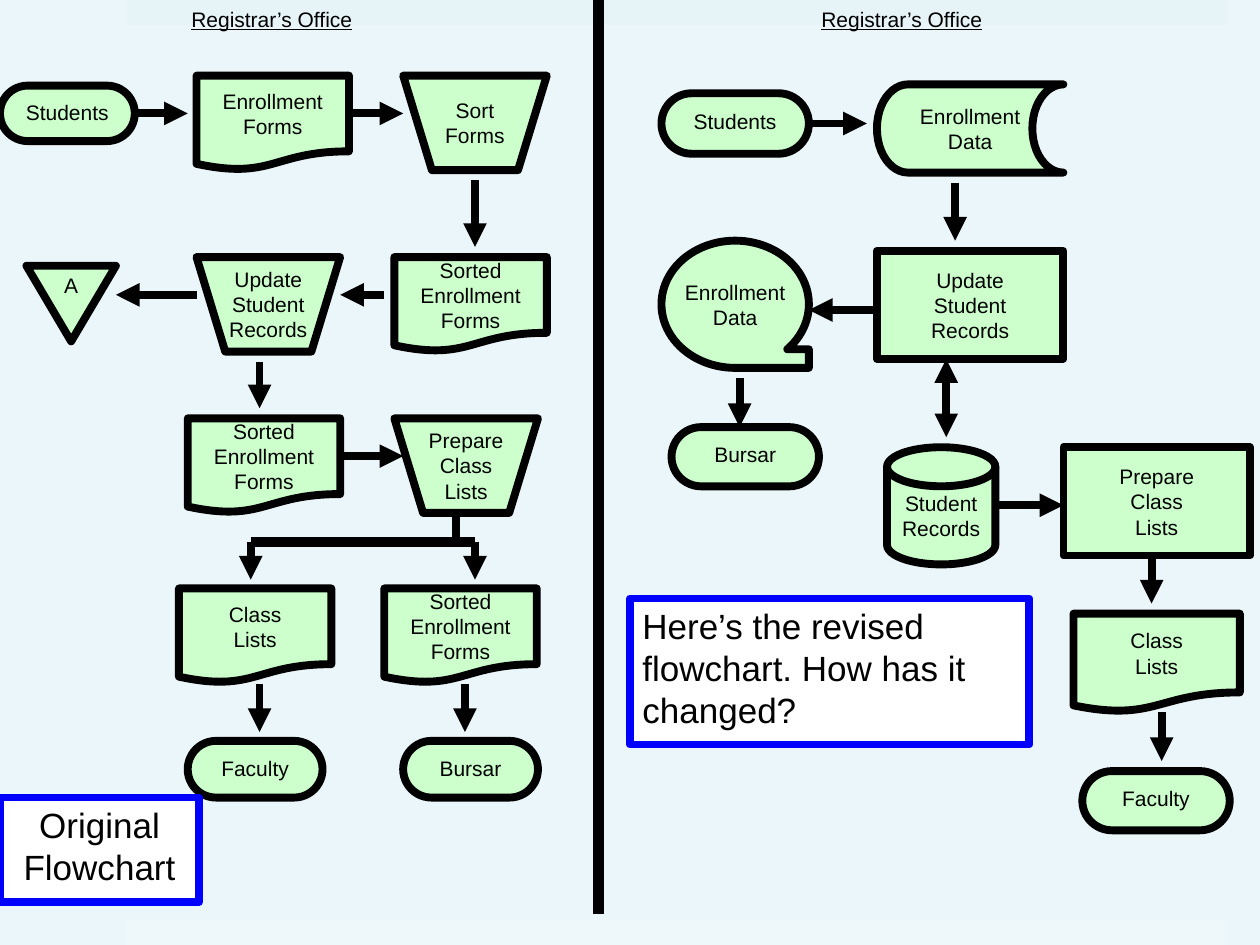
"""Build a slide that sets an original registrar flowchart beside its revision."""
import lxml.etree
import pptx
import pptx.dml.color
import pptx.enum.shapes
import pptx.enum.text
import pptx.oxml.ns
import pptx.util

PX = 9144
BLACK = pptx.dml.color.RGBColor(0x00, 0x00, 0x00)
WHITE = pptx.dml.color.RGBColor(0xFF, 0xFF, 0xFF)
BLUE = pptx.dml.color.RGBColor(0x00, 0x00, 0xFF)
GREEN = pptx.dml.color.RGBColor(0xCC, 0xFF, 0xCC)
SKY = pptx.dml.color.RGBColor(0xEB, 0xF6, 0xFA)
TOP_BAND = pptx.dml.color.RGBColor(0xE6, 0xF4, 0xF8)
BOTTOM_BAND = pptx.dml.color.RGBColor(0xEE, 0xF8, 0xFB)
KIND = pptx.enum.shapes.MSO_SHAPE
ALIGN = pptx.enum.text.PP_ALIGN
ANCHOR = pptx.enum.text.MSO_ANCHOR
FIT = pptx.enum.text.MSO_AUTO_SIZE

TERMINAL = KIND.ROUNDED_RECTANGLE
PROCESS = KIND.RECTANGLE
DOCUMENT = KIND.FLOWCHART_DOCUMENT
MANUAL = KIND.FLOWCHART_MANUAL_OPERATION
STORAGE = KIND.FLOWCHART_STORED_DATA
DISK = KIND.FLOWCHART_MAGNETIC_DISK
TAPE = KIND.FLOWCHART_SEQUENTIAL_ACCESS_STORAGE
MERGE = KIND.FLOWCHART_MERGE


def write(box, text, size=12, align=ALIGN.CENTER, anchor=ANCHOR.MIDDLE,
          wrap=False, underline=None, fit=FIT.NONE):
    frame = box.text_frame
    frame.word_wrap = wrap
    frame.auto_size = fit
    frame.vertical_anchor = anchor
    for number, line in enumerate(text.split("\n")):
        para = frame.add_paragraph() if number else frame.paragraphs[0]
        para.alignment = align
        span = para.add_run()
        span.text = line
        span.font.name = "Arial"
        span.font.size = pptx.util.Pt(size)
        span.font.color.rgb = BLACK
        span.font.underline = underline


def add_box(kind, left, top, width, height, fill=GREEN, outline=BLACK):
    box = page.shapes.add_shape(kind, left * PX, top * PX, width * PX, height * PX)
    box.shadow.inherit = False
    box.fill.solid()
    box.fill.fore_color.rgb = fill
    if outline is None:
        box.line.fill.background()
    else:
        box.line.color.rgb = outline
        box.line.width = pptx.util.Pt(4.5)
    return box


deck = pptx.Presentation()
deck.slide_width = 1000 * PX
deck.slide_height = 750 * PX
page = deck.slides.add_slide(deck.slide_layouts[6])
page.background.fill.solid()
page.background.fill.fore_color.rgb = SKY

for top, colour in [(0, TOP_BAND), (730, BOTTOM_BAND)]:
    add_box(PROCESS, 100, top, 875, 20, fill=colour, outline=None)

for left in (142, 642):
    heading = page.shapes.add_textbox(left * PX, 0, 149 * PX, 30 * PX)
    write(heading, "Registrar’s Office", align=ALIGN.LEFT, anchor=ANCHOR.TOP,
          underline=True, fit=FIT.SHAPE_TO_FIT_TEXT)

terminals = {}
for name, text, left, top, width, height in [
    ("original students", "Students", 0, 68, 107, 44),
    ("original bursar", "Bursar", 320, 588, 107, 45),
    ("original faculty", "Faculty", 149, 588, 107, 45),
    ("revised students", "Students", 525, 74, 117, 48),
    ("revised bursar", "Bursar", 533, 339, 117, 47),
    ("revised faculty", "Faculty", 859, 612, 117, 47),
]:
    box = add_box(TERMINAL, left, top, width, height)
    box.adjustments[0] = 0.5
    write(box, text, anchor=ANCHOR.TOP, wrap=True)
    terminals[name] = box

for kind, text, left, top, width, height in [
    (DOCUMENT, "Enrollment\nForms", 156, 60, 121, 75),
    (MANUAL, "Sort\nForms", 320, 60, 114, 75),
    (DOCUMENT, "Sorted\nEnrollment\nForms", 313, 204, 121, 75),
    (MANUAL, "Update\nStudent\nRecords", 156, 204, 114, 75),
    (MERGE, "A", 21, 211, 71, 60),
    (MANUAL, "Prepare\nClass\nLists", 313, 332, 114, 75),
    (DOCUMENT, "Sorted\nEnrollment\nForms", 149, 332, 121, 75),
    (DOCUMENT, "Class\nLists", 142, 467, 121, 75),
    (DOCUMENT, "Sorted\nEnrollment\nForms", 305, 467, 121, 75),
    (STORAGE, "Enrollment\nData", 696, 67, 148, 70),
    (PROCESS, "Update\nStudent\nRecords", 696, 199, 148, 86),
    (DISK, "Student\nRecords", 704, 355, 86, 93),
    (TAPE, "Enrollment\nData", 525, 191, 117, 101),
    (PROCESS, "Prepare\nClass\nLists", 844, 355, 148, 86),
    (DOCUMENT, "Class\nLists", 852, 487, 132, 78),
]:
    write(add_box(kind, left, top, width, height), text)

for x1, y1, x2, y2, weight, ends, source in [
    (475, 0, 475, 725, 6, "", None),
    (107, 90, 149, 90, 4.5, "tail", "original students"),
    (277, 90, 320, 90, 4.5, "tail", None),
    (377, 143, 377, 196, 4.5, "tail", None),
    (305, 234, 270, 234, 4.5, "tail", None),
    (156, 234, 92, 234, 4.5, "tail", None),
    (206, 287, 206, 324, 4.5, "tail", None),
    (270, 362, 320, 362, 4.5, "tail", None),
    (362, 407, 362, 430, 4.5, "", None),
    (199, 430, 377, 430, 6, "", None),
    (199, 430, 199, 460, 4.5, "tail", None),
    (377, 430, 377, 460, 4.5, "tail", None),
    (369, 543, 369, 581, 4.5, "tail", None),
    (206, 543, 206, 581, 4.5, "tail", None),
    (642, 98, 688, 98, 4.5, "tail", "revised students"),
    (758, 145, 758, 191, 4.5, "tail", None),
    (696, 246, 642, 246, 4.5, "tail", None),
    (587, 300, 587, 339, 4.5, "tail", None),
    (751, 285, 751, 347, 4.5, "head tail", None),
    (789, 401, 844, 401, 4.5, "tail", None),
    (914, 440, 914, 479, 4.5, "tail", None),
    (922, 565, 922, 604, 4.5, "tail", None),
]:
    arrow = page.shapes.add_connector(
        pptx.enum.shapes.MSO_CONNECTOR.STRAIGHT, x1 * PX, y1 * PX, x2 * PX, y2 * PX)
    arrow.line.color.rgb = BLACK
    arrow.line.width = pptx.util.Pt(weight)
    if source:
        arrow.begin_connect(terminals[source], 3)
    properties = arrow._element.spPr
    outline = properties.find(pptx.oxml.ns.qn("a:ln"))
    for end in ends.split():
        lxml.etree.SubElement(outline, pptx.oxml.ns.qn(f"a:{end}End"), type="triangle")
    lxml.etree.SubElement(properties, pptx.oxml.ns.qn("a:effectLst"))

for text, align, left, top, width, height in [
    ("Here’s the revised flowchart. How has it changed?", ALIGN.LEFT, 500, 475, 317, 116),
    ("Original Flowchart", ALIGN.CENTER, 0, 633, 158, 83),
]:
    note = add_box(PROCESS, left, top, width, height, fill=WHITE, outline=BLUE)
    write(note, text, size=20, align=align, anchor=ANCHOR.TOP, wrap=True,
          fit=FIT.SHAPE_TO_FIT_TEXT)

deck.save("out.pptx")
